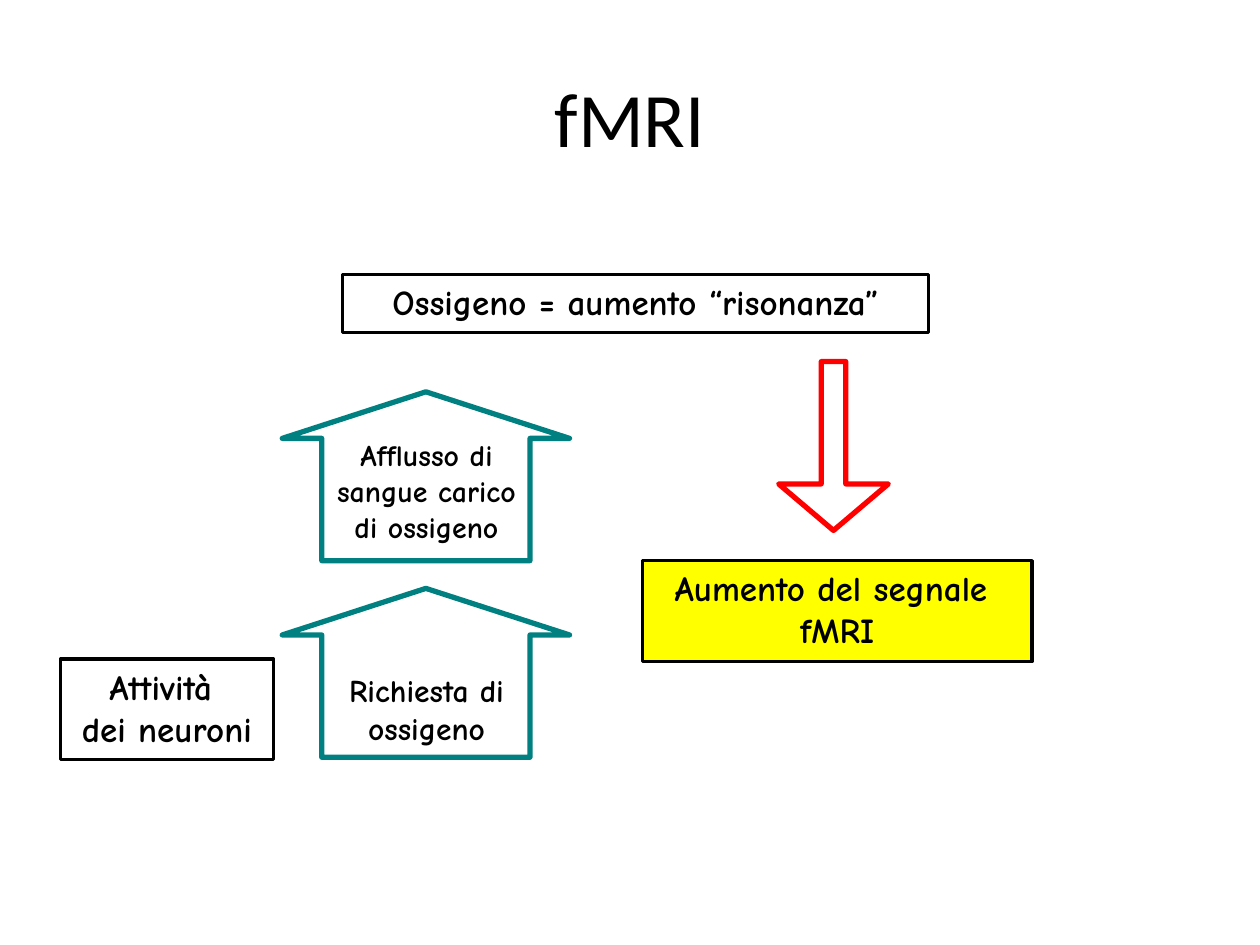
import pptx
import pptx.dml.color
import pptx.enum.shapes
import pptx.enum.text
import pptx.util

Inches = pptx.util.Inches
SHAPE = pptx.enum.shapes.MSO_SHAPE
ANCHOR = pptx.enum.text.MSO_ANCHOR
AUTO_SIZE = pptx.enum.text.MSO_AUTO_SIZE

COLORS = {"black": "000000", "teal": "008080", "red": "FF0000", "yellow": "FFFF00"}
LABEL_FONT = {"name": "Comic Neue", "bold": True}
TITLE_FONT = {"name": "Calibri", "bold": False}


def color(name):
    return pptx.dml.color.RGBColor.from_string(COLORS[name])


def write_text(frame, lines, size, font_format=LABEL_FONT, **frame_format):
    """Fill a frame with one centred paragraph per line."""
    settings = {"word_wrap": True, "auto_size": AUTO_SIZE.SHAPE_TO_FIT_TEXT,
                "vertical_anchor": ANCHOR.TOP, **frame_format}
    for attribute, value in settings.items():
        setattr(frame, attribute, value)
    for index, line in enumerate(lines):
        paragraph = frame.add_paragraph() if index else frame.paragraphs[0]
        paragraph.alignment = pptx.enum.text.PP_ALIGN.CENTER
        run = paragraph.add_run()
        run.text = line
        for attribute, value in {**font_format, "size": pptx.util.Pt(size)}.items():
            setattr(run.font, attribute, value)
        run.font.color.rgb = color("black")


def add_outlined(slide, preset, place, line, width, fill=None):
    shape = slide.shapes.add_shape(preset, *map(Inches, place))
    shape.shadow.inherit = False
    shape.line.color.rgb = color(line)
    shape.line.width = pptx.util.Pt(width)
    if fill:
        shape.fill.solid()
        shape.fill.fore_color.rgb = color(fill)
    else:
        shape.fill.background()
    return shape


def add_box(slide, place, lines, fill=None, wrap=False):
    box = add_outlined(slide, SHAPE.RECTANGLE, place, "black", 2, fill)
    write_text(box.text_frame, lines, 20, word_wrap=wrap)


def add_arrow(slide, place, line, shaft, head, rotation=0):
    arrow = add_outlined(slide, SHAPE.UP_ARROW, place, line, 3)
    arrow.adjustments[0] = shaft
    arrow.adjustments[1] = head
    arrow.rotation = rotation


def add_label(slide, place, text, size, **text_format):
    label = slide.shapes.add_textbox(*map(Inches, place))
    write_text(label.text_frame, [text], size, **text_format)


def main():
    deck = pptx.Presentation()
    deck.slide_width, deck.slide_height = Inches(10), Inches(7.5)
    slide = deck.slides.add_slide(deck.slide_layouts[6])

    add_box(slide, (0.48, 5.23, 1.69, 0.8), ["Attività ", "dei neuroni"])
    add_label(slide, (2.56, 5.28, 1.65, 0.7), "Richiesta di ossigeno", 18)
    for top in (4.67, 3.11):
        add_arrow(slide, (2.24, top, 2.28, 1.34), "teal", 0.725, 0.276)
    add_box(slide, (2.72, 2.18, 4.65, 0.46), ["Ossigeno = aumento “risonanza”"], wrap=True)
    add_arrow(slide, (6.18, 2.87, 0.87, 1.34), "red", 0.224, 0.424, rotation=180)
    add_label(slide, (2.48, 3.42, 1.81, 0.95), "Afflusso di sangue carico di ossigeno", 17)
    add_box(slide, (5.1, 4.45, 3.09, 0.8), ["Aumento del segnale ", "fMRI"], fill="yellow")
    add_label(slide, (0.5, 0.3, 9, 1.25), "fMRI", 44, font_format=TITLE_FONT,
              auto_size=AUTO_SIZE.NONE, vertical_anchor=ANCHOR.MIDDLE)

    deck.save("out.pptx")


if __name__ == "__main__":
    main()
